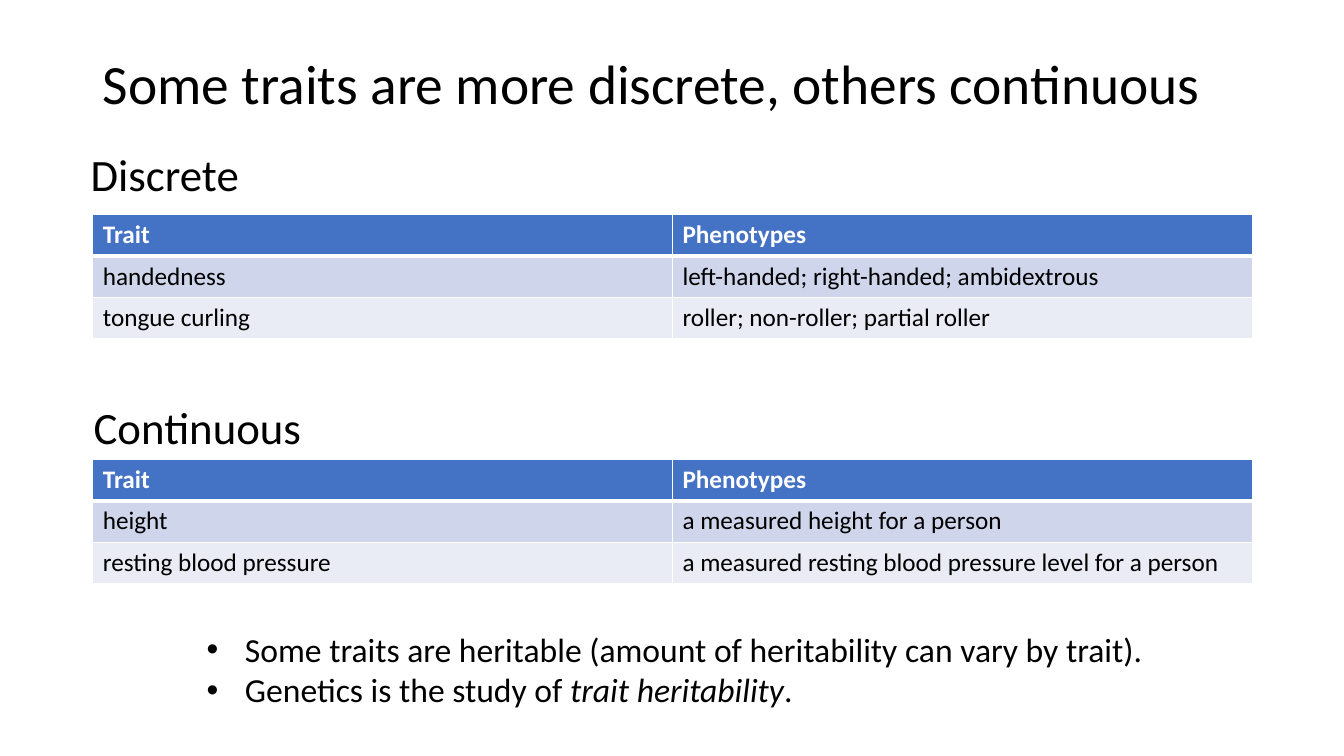
from dataclasses import dataclass

from lxml import etree
from pptx import Presentation
from pptx.dml.color import RGBColor
from pptx.enum.text import MSO_ANCHOR, MSO_AUTO_SIZE, PP_ALIGN
from pptx.oxml import parse_xml
from pptx.oxml.ns import nsdecls, qn
from pptx.util import Inches, Pt

LEFT = PP_ALIGN.LEFT
TOP = MSO_ANCHOR.TOP
MIDDLE = MSO_ANCHOR.MIDDLE
NO_FIT = MSO_AUTO_SIZE.NONE
GROW = MSO_AUTO_SIZE.SHAPE_TO_FIT_TEXT
TITLE_AND_CONTENT = 1


@dataclass(frozen=True)
class Theme:
    font: str = "Calibri"
    ink: str = "000000"
    paper: str = "FFFFFF"
    header: str = "4472C4"
    bands: tuple = ("CFD5EA", "E9EBF5")
    title_size: float = 39.6
    heading_size: float = 32
    bullet_size: float = 24
    cell_size: float = 18


THEME = Theme()
ROW_HEIGHT = 0.41
INDENT = Inches(0.38)

TITLE = "Some traits are more discrete, others continuous"
SECTIONS = (
    (
        "Discrete", (0.8, 1.41, 1.69, 0.64), (0.92, 2.13, 11.5),
        (
            ("Trait", "Phenotypes"),
            ("handedness", "left-handed; right-handed; ambidextrous"),
            ("tongue curling", "roller; non-roller; partial roller"),
        ),
    ),
    (
        "Continuous", (0.83, 3.92, 2.29, 0.64), (0.92, 4.56, 11.5),
        (
            ("Trait", "Phenotypes"),
            ("height", "a measured height for a person"),
            ("resting blood pressure",
             "a measured resting blood pressure level for a person"),
        ),
    ),
)
BULLETS = (
    (("Some traits are heritable (amount of heritability can vary by trait).", False),),
    (("Genetics is the study of ", False), ("trait heritability", True), (".", False)),
)


def apply_format(target, values):
    for name, value in values.items():
        setattr(target, name, value)


def place(shape, box):
    names = ("left", "top", "width", "height")
    apply_format(shape, dict(zip(names, map(Inches, box))))


def add_span(para, text, size, color=THEME.ink, bold=False, italic=False):
    span = para.add_run()
    span.text = text
    apply_format(span.font, {
        "name": THEME.font, "size": Pt(size), "bold": bold, "italic": italic,
    })
    span.font.color.rgb = RGBColor.from_string(color)


def add_title(page, box):
    title = page.shapes.title
    place(title, box)
    apply_format(title.text_frame, {
        "word_wrap": True, "auto_size": NO_FIT, "vertical_anchor": MIDDLE,
    })
    para = title.text_frame.paragraphs[0]
    apply_format(para, {"alignment": LEFT, "line_spacing": 0.9})
    add_span(para, TITLE, THEME.title_size)


def add_heading(page, box, text):
    heading = page.shapes.add_textbox(*map(Inches, box))
    apply_format(heading.text_frame, {"word_wrap": False, "auto_size": GROW})
    add_span(heading.text_frame.paragraphs[0], text, THEME.heading_size)


def set_borders(cell, bottom_width):
    widths = {"lnL": 1, "lnR": 1, "lnT": 1, "lnB": bottom_width}
    properties = cell._tc.get_or_add_tcPr()
    for position, (side, width) in enumerate(widths.items()):
        line = parse_xml(
            f'<a:{side} {nsdecls("a")} w="{Pt(width)}"><a:solidFill>'
            f'<a:srgbClr val="{THEME.paper}"/></a:solidFill></a:{side}>'
        )
        properties.insert(position, line)


def add_trait_table(page, box, rows):
    left, top, width = box
    frame = page.shapes.add_table(
        len(rows), len(rows[0]), Inches(left), Inches(top),
        Inches(width), Inches(ROW_HEIGHT * len(rows)),
    )
    for row_index, texts in enumerate(rows):
        is_header = row_index == 0
        fill = THEME.header if is_header else THEME.bands[(row_index - 1) % 2]
        color = THEME.paper if is_header else THEME.ink
        for column_index, text in enumerate(texts):
            cell = frame.table.cell(row_index, column_index)
            cell.fill.solid()
            cell.fill.fore_color.rgb = RGBColor.from_string(fill)
            set_borders(cell, 3 if is_header else 1)
            para = cell.text_frame.paragraphs[0]
            add_span(para, text, THEME.cell_size, color, bold=is_header)


def add_bullets(page, box):
    body = page.placeholders[1]
    place(body, box)
    frame = body.text_frame
    apply_format(frame, {
        "word_wrap": True, "auto_size": NO_FIT, "vertical_anchor": TOP,
    })
    for index, spans in enumerate(BULLETS):
        para = frame.add_paragraph() if index else frame.paragraphs[0]
        apply_format(para, {
            "alignment": LEFT, "space_before": Pt(0), "space_after": Pt(0),
        })
        properties = para._p.get_or_add_pPr()
        properties.set("marL", str(INDENT))
        properties.set("indent", str(-INDENT))
        etree.SubElement(properties, qn("a:buFont")).set("typeface", "Arial")
        etree.SubElement(properties, qn("a:buChar")).set("char", "•")
        for text, italic in spans:
            add_span(para, text, THEME.bullet_size, italic=italic)


def add_traits_slide(deck):
    page = deck.slides.add_slide(deck.slide_layouts[TITLE_AND_CONTENT])
    add_title(page, (0.92, 0.4, 11.5, 0.92))
    for heading, heading_box, table_box, rows in SECTIONS:
        add_heading(page, heading_box, heading)
        add_trait_table(page, table_box, rows)
    add_bullets(page, (1.95, 6.19, 9.98, 0.91))


def main():
    deck = Presentation()
    apply_format(deck, {"slide_width": Inches(13.33), "slide_height": Inches(7.5)})
    add_traits_slide(deck)
    deck.save("out.pptx")


if __name__ == "__main__":
    main()
